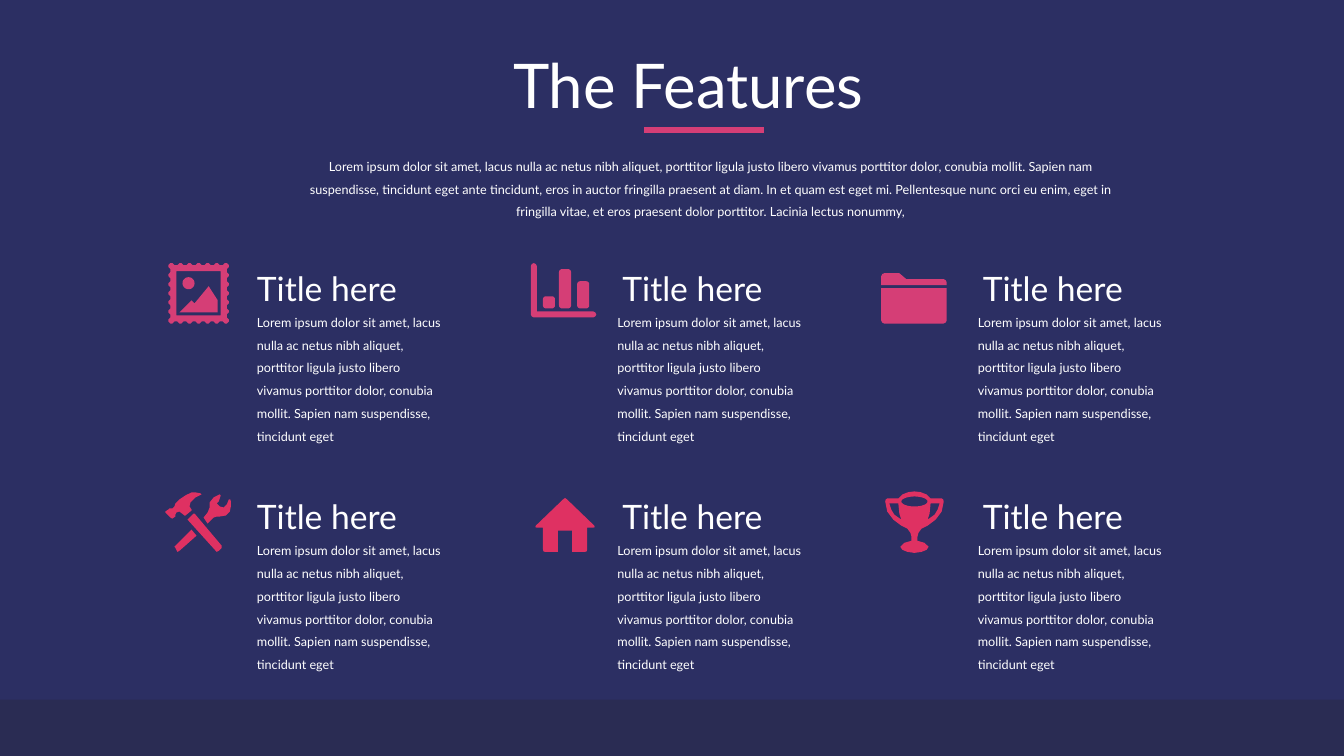
from math import cos, pi, sin

from lxml import etree
from pptx import Presentation
from pptx.dml.color import RGBColor
from pptx.enum.shapes import MSO_CONNECTOR, MSO_SHAPE
from pptx.enum.text import MSO_AUTO_SIZE, PP_ALIGN
from pptx.oxml.ns import qn
from pptx.util import Inches, Pt

STRAIGHT = MSO_CONNECTOR.STRAIGHT
RECTANGLE = MSO_SHAPE.RECTANGLE
GROW = MSO_AUTO_SIZE.SHAPE_TO_FIT_TEXT
NO_FIT = MSO_AUTO_SIZE.NONE
LEFT, CENTER = PP_ALIGN.LEFT, PP_ALIGN.CENTER

FONT = "Lato"
COLORS = {"background": "2C2F63", "footer": "2A2C53", "text": "FFFFFF",
          "pink": "D53E76", "red": "DF3162"}

FEATURE_TEXT = ("Lorem ipsum dolor sit amet, lacus nulla ac netus nibh aliquet, "
                "porttitor ligula justo libero vivamus porttitor dolor, conubia "
                "mollit. Sapien nam suspendisse, tincidunt eget")
INTRO_TEXT = (FEATURE_TEXT + " ante tincidunt, eros in auctor fringilla praesent at "
              "diam. In et quam est eget mi. Pellentesque nunc orci eu enim, eget in "
              "fringilla vitae, et eros praesent dolor porttitor. Lacinia lectus "
              "nonummy,")


def color(name):
    return RGBColor.from_string(COLORS[name])


# Icon outlines are lists of contours, in hundredths of an inch.

def arc(center_x, center_y, radius_x, radius_y, start=0.0, sweep=2 * pi, steps=24):
    angles = [start + sweep * step / steps for step in range(steps + 1)]
    return [(center_x + radius_x * cos(a), center_y + radius_y * sin(a)) for a in angles]


def rounded_box(left, top, width, height, radius=3):
    right, bottom = left + width - radius, top + height - radius
    left, top = left + radius, top + radius
    corners = [(right, bottom), (left, bottom), (left, top), (right, top)]
    return [point for turn, (x, y) in enumerate(corners)
            for point in arc(x, y, radius, radius, turn * pi / 2, pi / 2, 4)]


def mirror(points, width):
    return [(width - x, y) for x, y in reversed(points)]


def stamp():
    side = []
    for tooth in range(3, 57, 9):
        side += [(tooth - 1, 0), (tooth + 1, 0), (tooth + 3, 2), (tooth + 6, 2)]
    side += [(56, 0), (58, 0)]
    edge = []
    for _ in range(4):
        edge += side
        side = [(60 - y, x) for x, y in side]
    window = [(8, 8), (8, 52), (52, 52), (52, 8)]
    hills = [(26, 40), (40, 23), (49, 37), (49, 49), (11, 49), (23, 37)]
    return [edge, window, hills, arc(20, 20, 6, 6)]


def bar_chart():
    axes = [(0, 3), (1, 1), (3, 0), (5, 1), (6, 3), (6, 48), (62, 48), (64, 49),
            (65, 51), (64, 53), (62, 54), (3, 54), (1, 53), (0, 51)]
    bars = [(12, 33), (28, 6), (46, 18)]
    return [axes] + [rounded_box(left, top, 12, 45 - top) for left, top in bars]


def folder():
    tab = [(0, 12), (0, 3), (1, 1), (3, 0), (18, 0), (25, 6), (62, 6), (64, 7),
           (65, 9), (65, 12)]
    front = [(0, 15), (65, 15), (65, 47), (64, 49), (62, 50), (3, 50), (1, 49), (0, 47)]
    return [tab, front]


def tools():
    hammer_head = [(11, 20), (14, 19), (19, 23), (20, 23), (26, 18), (26, 17), (24, 14),
                   (25, 10), (30, 5), (36, 2), (35, 1), (30, 0), (26, 0), (20, 3),
                   (14, 7), (10, 11), (9, 14), (7, 16), (4, 16), (3, 17), (0, 19),
                   (0, 20), (5, 25), (7, 26), (10, 24), (10, 22)]
    hammer_handle = [(29, 21), (28, 21), (24, 25), (22, 27), (50, 58), (51, 59),
                     (53, 58), (56, 55), (56, 53)]
    wrench_head = [(65, 9), (64.5, 7), (63, 7), (61, 12), (58, 15), (54, 14), (51, 11),
                   (53, 9), (55, 3), (54, 2), (48, 5), (44, 10), (44, 15), (42, 20),
                   (38, 25), (42, 31), (48, 25), (51, 24), (54, 24), (60, 23),
                   (64, 19), (65, 14)]
    wrench_handle = [(10, 53), (9, 54), (10, 55), (12, 59), (14, 58), (31, 43), (26, 37)]
    return [hammer_head, hammer_handle, wrench_head, wrench_handle]


def house():
    half = [(30, 0.5), (32, 2), (59, 28), (59.5, 29.5), (58, 30), (52, 30), (52, 51),
            (51.5, 53.5), (50, 54), (37, 54), (37, 33)]
    return [half + mirror(half, 60)]


def trophy():
    half = [(29, 0), (35, 0.7), (41, 3), (45, 7), (56, 7), (57.5, 8), (58, 10), (56, 20),
            (50, 28), (42, 34), (36, 37), (33, 41), (32, 45), (32, 49), (39, 51),
            (43, 55), (41, 58), (36, 60), (29, 61)]
    handle = [(42, 28), (44, 22), (45, 12), (54, 12), (52, 18), (49, 23)]
    return [half + mirror(half, 58), handle, mirror(handle, 58), arc(29, 10, 13, 5)]


def add_icon(slide, left, top, contours, fill):
    """Draw all contours as one shape; inner contours become holes."""
    scaled = [[(round(x * 10), round(y * 10)) for x, y in points] for points in contours]
    builder = slide.shapes.build_freeform(*scaled[0][0], scale=Inches(0.001))
    for index, points in enumerate(scaled):
        if index:
            builder.move_to(*points[0])
        builder.add_line_segments(points[1:], close=True)
    paint(builder.convert_to_shape(Inches(left), Inches(top)), fill)


def paint(shape, fill):
    shape.shadow.inherit = False
    shape.fill.solid()
    shape.fill.fore_color.rgb = color(fill)
    shape.line.fill.background()


def add_text(slide, box, text, size, align=LEFT, line_spacing=None, space_before=None):
    text_frame = slide.shapes.add_textbox(*map(Inches, box)).text_frame
    text_frame.word_wrap = True
    text_frame.auto_size = GROW if line_spacing else NO_FIT
    paragraph = text_frame.paragraphs[0]
    paragraph.alignment = align
    paragraph.line_spacing = line_spacing
    paragraph.space_before = space_before
    run = paragraph.add_run()
    run.text = text
    run.font.name = FONT
    run.font.size = Pt(size)
    run.font.color.rgb = color("text")


def add_header(slide, left, top):
    add_text(slide, (left + 2.14, top, 3.86, 0.87), "The Features", 44,
             space_before=Pt(10))
    line_y = Inches(top + 0.87)
    underline = slide.shapes.add_connector(
        STRAIGHT, Inches(left + 3.54), line_y, Inches(left + 4.73), line_y)
    underline.line.color.rgb = color("pink")
    underline.line.width = Pt(4.5)
    etree.SubElement(underline._element.spPr, qn("a:effectLst"))
    add_text(slide, (left, top + 1.03, 8.39, 0.78), INTRO_TEXT, 9, CENTER, 1.5)


def add_feature(slide, left, top, title_indent, icon, icon_offset, fill):
    icon_x, icon_y = icon_offset
    add_icon(slide, left + icon_x, top + icon_y, icon(), fill)
    add_text(slide, (left, top + 0.39, 2.02, 1.46), FEATURE_TEXT, 9, line_spacing=1.5)
    add_text(slide, (left + title_indent, top, 1.68, 0.39), "Title here", 24,
             space_before=Pt(10))


def add_feature_grid(slide, left, top):
    rows = [
        ("pink", [(stamp, (-0.78, 0)), (bar_chart, (-0.76, 0)), (folder, (-0.86, 0.1))]),
        ("red", [(tools, (-0.81, 0.01)), (house, (-0.72, 0.06)), (trophy, (-0.82, 0))]),
    ]
    for row, (fill, features) in enumerate(rows):
        for column, (icon, offset) in enumerate(features):
            add_feature(slide, left + column * 3.575, top + row * 2.265,
                        0.05 if column else 0, icon, offset, fill)


def main():
    presentation = Presentation()
    presentation.slide_width = Inches(13.33)
    presentation.slide_height = Inches(7.5)
    slide = presentation.slides.add_slide(presentation.slide_layouts[6])
    slide.background.fill.solid()
    slide.background.fill.fore_color.rgb = color("background")
    footer = slide.shapes.add_shape(
        RECTANGLE, 0, Inches(6.94), presentation.slide_width, Inches(0.56))
    paint(footer, "footer")
    add_header(slide, 2.85, 0.42)
    add_feature_grid(slide, 2.45, 2.61)
    presentation.save("out.pptx")


if __name__ == "__main__":
    main()
